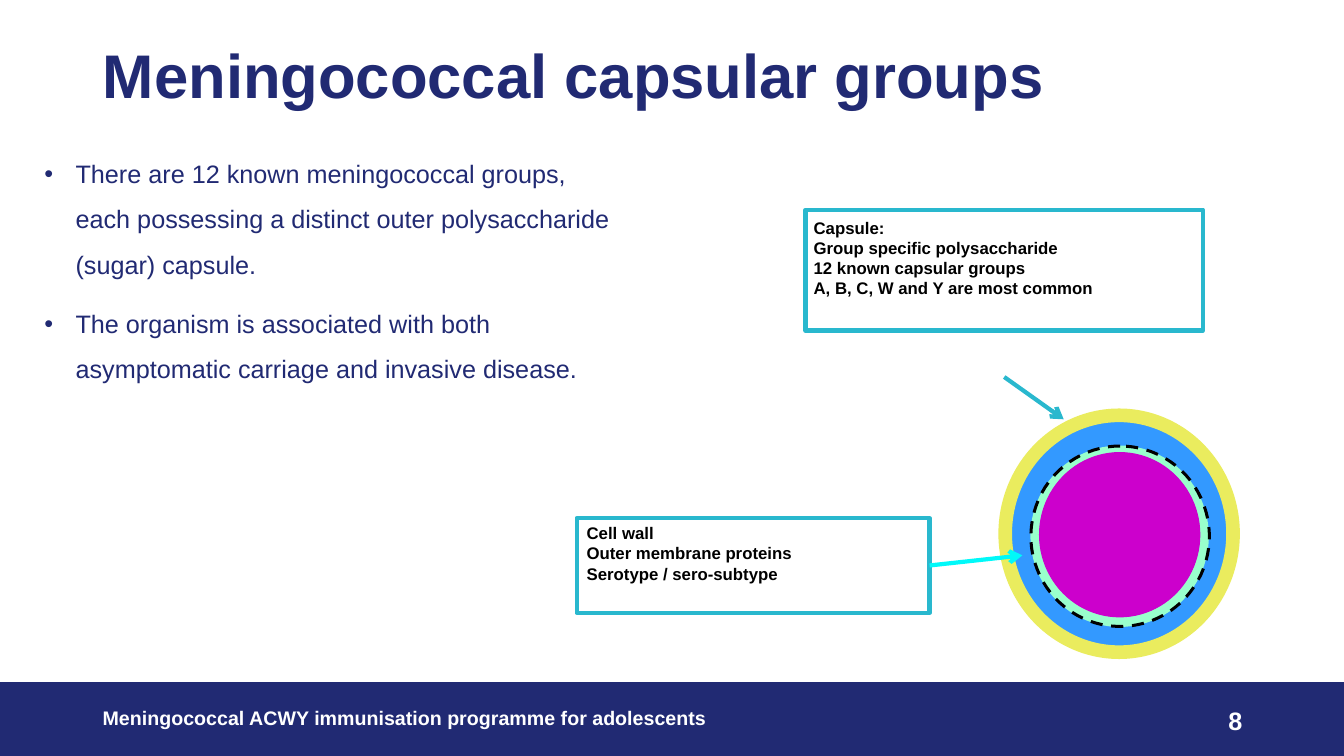
from math import cos, radians, sin

from lxml.etree import SubElement
from pptx import Presentation
from pptx.dml.color import RGBColor
from pptx.enum.shapes import MSO_CONNECTOR as Connector, MSO_SHAPE as Preset
from pptx.enum.text import MSO_ANCHOR as Anchor, MSO_AUTO_SIZE as AutoSize, PP_ALIGN as Align
from pptx.oxml.ns import qn
from pptx.util import Inches, Pt

NAVY = RGBColor(0x21, 0x2A, 0x73)
TEAL = RGBColor(0x29, 0xB8, 0xCE)
CYAN = RGBColor(0x00, 0xF9, 0xF9)
YELLOW = RGBColor(0xEA, 0xEC, 0x5E)
BLUE = RGBColor(0x33, 0x99, 0xFF)
MINT = RGBColor(0x99, 0xFF, 0xCC)
MAGENTA = RGBColor(0xCC, 0x00, 0xCC)
WHITE = RGBColor(0xFF, 0xFF, 0xFF)
BLACK = RGBColor(0x00, 0x00, 0x00)
DASH_COUNT, DASH_PITCH, DASH_SWEEP = 27, 13.4, 7.8


def write(frame, lines, size, color, bold=False, align=Align.LEFT):
    """Fill a text frame with one formatted paragraph per line."""
    frame.text = "\n".join(lines)
    frame.word_wrap = True
    frame.auto_size = AutoSize.NONE
    frame.vertical_anchor = Anchor.TOP
    for paragraph in frame.paragraphs:
        paragraph.alignment = align
        font = paragraph.font
        font.name, font.size, font.bold = "Arial", Pt(size), bold
        font.color.rgb = color


def place(part, left, top, width, height):
    """Move a placeholder to a box given in inches."""
    part.left, part.top = Inches(left), Inches(top)
    part.width, part.height = Inches(width), Inches(height)


def paint(part, fill, line=None, weight=1):
    """Give a shape a flat fill and an optional outline."""
    part.shadow.inherit = False
    part.fill.solid()
    part.fill.fore_color.rgb = fill
    if line is None:
        part.line.fill.background()
    else:
        part.line.color.rgb = line
        part.line.width = Pt(weight)


def add_preset(slide, preset, box, fill, line=None, weight=1):
    """Add a painted preset shape in a box given in inches."""
    part = slide.shapes.add_shape(preset, *map(Inches, box))
    paint(part, fill, line, weight)
    return part


def add_heading(slide, box):
    """Write the slide title."""
    heading = slide.shapes.title
    place(heading, *box)
    write(heading.text_frame, ["Meningococcal capsular groups"], 44, NAVY, bold=True)
    heading.text_frame.paragraphs[0].line_spacing = 0.9


def add_facts(slide, box):
    """Write the bulleted facts in the body placeholder."""
    facts = slide.placeholders[1]
    place(facts, *box)
    write(facts.text_frame, [
        "There are 12 known meningococcal groups, each possessing a distinct "
        "outer polysaccharide (sugar) capsule.",
        "The organism is associated with both asymptomatic carriage and invasive disease.",
    ], 18, NAVY)
    for paragraph in facts.text_frame.paragraphs:
        paragraph.line_spacing = 1.5
        paragraph.space_before = Pt(10)
        properties = paragraph._p.get_or_add_pPr()
        properties.set("marL", str(Inches(0.31)))
        properties.set("indent", str(Inches(-0.31)))
        SubElement(properties, qn("a:buChar")).set("char", "•")


def add_footer(slide, box):
    """Draw the footer band with programme name and page number."""
    left, top, width, height = box
    add_preset(slide, Preset.RECTANGLE, box, NAVY, NAVY)
    programme = "Meningococcal ACWY immunisation programme for adolescents"
    for text, offset, span, size, align in (
        (programme, 0.92, 8, 14, Align.LEFT),
        ("8", 9.42, 3, 18, Align.RIGHT),
    ):
        label = slide.shapes.add_textbox(
            Inches(left + offset), Inches(top + 0.18), Inches(span), Inches(0.4))
        write(label.text_frame, [text], size, WHITE, bold=True, align=align)


def add_membrane(slide, center_x, center_y, radius_x, radius_y, thickness):
    """Draw the dashed membrane, counterclockwise from the top."""
    def point(angle, inset):
        return (Inches(center_x - (radius_x - inset) * sin(radians(angle))),
                Inches(center_y - (radius_y - inset) * cos(radians(angle))))

    for index in range(DASH_COUNT):
        angles = [index * DASH_PITCH + DASH_SWEEP * part for part in (0, 0.5, 1)]
        outer = [point(angle, 0) for angle in angles]
        inner = [point(angle, thickness) for angle in reversed(angles)]
        outline = slide.shapes.build_freeform(*outer[0])
        outline.add_line_segments(outer[1:] + inner, close=True)
        paint(outline.convert_to_shape(), BLACK)


def add_cell(slide, box):
    """Draw the bacterium as nested layers inside its box."""
    left, top, width, height = box
    add_preset(slide, Preset.OVAL, box, BLUE, YELLOW, 9.75)
    add_preset(slide, Preset.OVAL, (left + 0.25, top + 0.3, 1.77, 1.8), MINT)
    add_membrane(slide, left + 1.14, top + 1.2, 0.9, 0.91, 0.03)
    add_preset(slide, Preset.OVAL, (left + 0.34, top + 0.37, 1.59, 1.63), MAGENTA, MAGENTA, 0.75)


def add_callout(slide, box, lines, inset_x, inset_y):
    """Add an outlined explanation box."""
    callout = add_preset(slide, Preset.RECTANGLE, box, WHITE, TEAL, 3)
    frame = callout.text_frame
    write(frame, lines, 12, BLACK, bold=True)
    frame.margin_left = frame.margin_right = Inches(inset_x)
    frame.margin_top = frame.margin_bottom = Inches(inset_y)
    return callout


def add_pointer(slide, start, end, color):
    """Add an arrow between two points given in inches."""
    pointer = slide.shapes.add_connector(Connector.STRAIGHT, *map(Inches, start + end))
    pointer.line.color.rgb = color
    pointer.line.width = Pt(3)
    SubElement(pointer.line._get_or_add_ln(), qn("a:tailEnd")).set("type", "arrow")
    SubElement(pointer._element.spPr, qn("a:effectLst"))
    return pointer


def main():
    """Build and save the slide."""
    deck = Presentation()
    deck.slide_width, deck.slide_height = Inches(13.33), Inches(7.5)
    slide = deck.slides.add_slide(deck.slide_layouts[1])
    add_heading(slide, (0.92, 0.4, 11.5, 1.45))
    add_facts(slide, (0.34, 1.37, 5.81, 2.92))
    add_footer(slide, (0, 6.77, 13.33, 0.73))
    add_cell(slide, (9.97, 4.12, 2.26, 2.35))
    add_callout(slide, (7.99, 2.08, 3.94, 1.2), [
        "Capsule:", "Group specific polysaccharide",
        "12 known capsular groups", "A, B, C, W and Y are most common",
    ], 0.08, 0.08)
    cell_wall = add_callout(slide, (5.72, 5.14, 3.5, 0.94), [
        "Cell wall", "Outer membrane proteins", "Serotype / sero-subtype",
    ], 0.1, 0.05)
    add_pointer(slide, (9.96, 3.74), (10.55, 4.16), TEAL)
    add_pointer(slide, (9.22, 5.61), (10.14, 5.51), CYAN).begin_connect(cell_wall, 3)
    deck.save("out.pptx")


if __name__ == "__main__":
    main()
